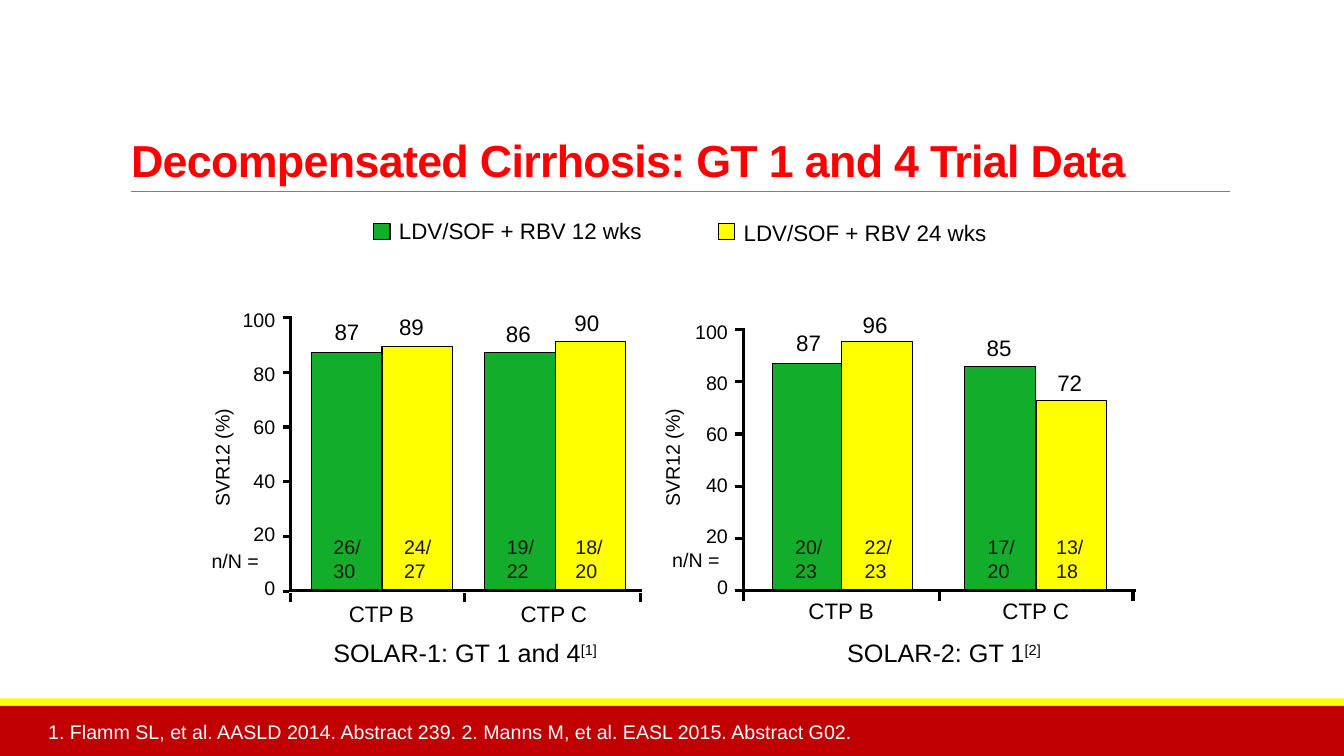
import pptx
import pptx.util
import pptx.dml.color
import pptx.enum.shapes
import pptx.enum.text
import pptx.oxml.ns
import lxml.etree

COLOURS = {"red": "FF0000", "band": "C00000", "yellow": "FFFF00", "green": "12AD2B",
           "black": "000000", "ratio": "1A1504", "grey": "808080", "white": "FFFFFF"}
COLOURS = {name: pptx.dml.color.RGBColor.from_string(value) for name, value in COLOURS.items()}
ALIGN = pptx.enum.text.PP_ALIGN
ANCHOR = pptx.enum.text.MSO_ANCHOR
FIT = pptx.enum.text.MSO_AUTO_SIZE

# Grid: every column and row is a tenth of an inch
CELL = pptx.util.Inches(0.1)
COLUMNS, ROWS = 133.33, 75

presentation = pptx.Presentation()
presentation.slide_width = round(COLUMNS * CELL)
presentation.slide_height = ROWS * CELL
slide = presentation.slides.add_slide(presentation.slide_layouts[5])


def add_text(text, left, top, width, height, size=16, colour="black", align=ALIGN.LEFT,
             wrap=False, anchor=ANCHOR.TOP):
    box = slide.shapes.add_textbox(*(round(n * CELL) for n in (left, top, width, height)))
    frame = {"word_wrap": wrap, "auto_size": FIT.SHAPE_TO_FIT_TEXT, "vertical_anchor": anchor}
    for name, value in frame.items():
        setattr(box.text_frame, name, value)
    paragraph = box.text_frame.paragraphs[0]
    paragraph.alignment = align
    run = paragraph.add_run()
    run.text = text
    for name, value in {"name": "Arial", "size": pptx.util.Pt(size)}.items():
        setattr(run.font, name, value)
    run.font.color.rgb = COLOURS[colour]
    return box


def add_line(x1, y1, x2, y2, colour="black", weight=2.25):
    line = slide.shapes.add_connector(pptx.enum.shapes.MSO_CONNECTOR.STRAIGHT,
                                      *(round(n * CELL) for n in (x1, y1, x2, y2)))
    line.line.color.rgb = COLOURS[colour]
    line.line.width = pptx.util.Pt(weight)
    lxml.etree.SubElement(line._element.spPr, pptx.oxml.ns.qn("a:effectLst"))


# Bars: left, top, value, value left, value top, n/N, n/N left, n/N width
panels = [
    {"name": "SOLAR-1: GT 1 and 4", "reference": "[1]", "name_box": (28.5, 35.3),
     "axis": 28.8, "axis_top": 31.4, "axis_end": 63.7,
     "tick_left": 28.1, "tick_top": 31.5, "tick_step": 5.43,
     "label_right": 28.3, "label_top": 30.1, "label_step": 5.3,
     "axis_title": (8.2, 27.7), "ratio_label": (20, 54),
     "category_ticks": (28.8, 46.1, 63.5), "category_tick_top": 58.8,
     "categories": (33.5, 50.6), "category_top": 59,
     "bars": [(30.9, 35, "87", 32.2, 31.1, "26/ 30", 32.1, 6.2),
              (37.9, 34.4, "89", 38.6, 30.6, "24/ 27", 39.1, 6.6),
              (48.1, 35, "86", 49.2, 31.3, "19/ 22", 49.3, 5.6),
              (55.1, 33.9, "90", 56, 30.2, "18/ 20", 56.1, 6.1)]},
    {"name": "SOLAR-2: GT 1", "reference": "[2]", "name_box": (73.9, 39.5),
     "axis": 73.8, "axis_top": 32.5, "axis_end": 112.7,
     "tick_left": 72.9, "tick_top": 32.7, "tick_step": 5.18,
     "label_right": 73.2, "label_top": 31.2, "label_step": 5.06,
     "axis_title": (60.8, 11.8), "ratio_label": (65.7, 53.9),
     "category_ticks": (73.8, 93.2, 112.4), "category_tick_top": 58.7,
     "categories": (79.1, 98.4), "category_top": 58.8,
     "bars": [(76.6, 36.1, "87", 78, 32.2, "20/23", 77.9, 5.3),
              (83.5, 33.9, "96", 84.6, 30.4, "22/23", 84.8, 5.4),
              (95.7, 36.4, "85", 96.9, 32.7, "17/20", 97, 5),
              (102.8, 39.7, "72", 103.9, 36.1, "13/18", 103.8, 5.4)]},
]
BASE = 58.6
BAR_WIDTH = 7
SERIES = ("green", "yellow")

# Rectangles: footer bands, legend keys, bars
rectangles = [(0, 70, COLUMNS, 5, "band", False), (0, 69.3, COLUMNS, 0.7, "yellow", False),
              (37.1, 22.2, 1.6, 1.6, "green", True), (71.3, 22.2, 1.6, 1.6, "yellow", True)]
for panel in panels:
    for index, (left, top, *labels) in enumerate(panel["bars"]):
        rectangles.append((left, top, BAR_WIDTH, BASE - top, SERIES[index % 2], True))
for *place, colour, outlined in rectangles:
    shape = slide.shapes.add_shape(pptx.enum.shapes.MSO_SHAPE.RECTANGLE,
                                   *(round(n * CELL) for n in place))
    shape.shadow.inherit = False
    shape.fill.solid()
    shape.fill.fore_color.rgb = COLOURS[colour]
    if outlined:
        shape.line.color.rgb = COLOURS["black"]
        shape.line.width = pptx.util.Pt(0.75)
    else:
        shape.line.fill.background()

# Title and its rule
title = slide.shapes.title
for name, value in {"left": 12, "top": 3.1, "width": 110, "height": 15.9}.items():
    setattr(title, name, round(value * CELL))
title.text_frame.text = "Decompensated Cirrhosis: GT 1 and 4 Trial Data"
title.text_frame.vertical_anchor = ANCHOR.BOTTOM
title.text_frame.auto_size = FIT.NONE
heading = title.text_frame.paragraphs[0]
heading.alignment = ALIGN.LEFT
heading.line_spacing = 0.85
run = heading.runs[0]
for name, value in {"name": "Arial", "size": pptx.util.Pt(32), "bold": True}.items():
    setattr(run.font, name, value)
run.font.color.rgb = COLOURS["red"]
run._r.get_or_add_rPr().set("spc", "-50")
add_line(13, 19, 122, 19, "grey", 0.5)

# References and legend labels
add_text("1. Flamm SL, et al. AASLD 2014. Abstract 239. 2. Manns M, et al. EASL 2015. Abstract G02.",
         3.8, 70.8, 82.1, 3.4, 14, "white", wrap=True, anchor=ANCHOR.BOTTOM)
for weeks, left, top in ((12, 38.6, 21.1), (24, 72.8, 21.2)):
    add_text(f"LDV/SOF + RBV {weeks} wks", left, top, 26.4, 3.7)

for panel in panels:
    # Axes and ticks
    axis = panel["axis"]
    add_line(axis, panel["axis_top"], axis, BASE)
    add_line(axis - 0.1, BASE, panel["axis_end"], BASE)
    for x in panel["category_ticks"]:
        add_line(x, panel["category_tick_top"], x, panel["category_tick_top"] + 0.9)
    for index, value in enumerate(range(100, -1, -20)):
        y = panel["tick_top"] + index * panel["tick_step"]
        add_line(panel["tick_left"], y, axis - 0.1, y)
        width = 2 + 1.1 * len(str(value))
        add_text(str(value), panel["label_right"] - width,
                 panel["label_top"] + index * panel["label_step"], width, 3.4, 14,
                 align=ALIGN.RIGHT)

    # Axis title, row label and categories
    left, width = panel["axis_title"]
    axis_title = add_text("SVR12 (%)", left, 43.7, width, 3.4, 14, align=ALIGN.CENTER, wrap=True)
    axis_title.rotation = 270
    add_text("n/N =", *panel["ratio_label"], 6.8, 3.4, 14)
    for category, left in zip(("CTP B", "CTP C"), panel["categories"]):
        add_text(category, left, panel["category_top"], 8.7, 3.7, align=ALIGN.CENTER)

    # Bar labels
    for _, _, value, value_left, value_top, ratio, ratio_left, ratio_width in panel["bars"]:
        add_text(value, value_left, value_top, 4.5, 3.7)
        add_text(ratio, ratio_left, 52.6, ratio_width, 5.8, 14, "ratio", wrap=True)

    # Trial name with raised reference
    left, width = panel["name_box"]
    name_box = add_text(panel["name"], left, 63.1, width, 3.7, 18, align=ALIGN.CENTER, wrap=True)
    paragraph = name_box.text_frame.paragraphs[0]
    paragraph.line_spacing = 0.9
    reference = paragraph.add_run()
    reference.text = panel["reference"]
    for name, value in {"name": "Arial", "size": pptx.util.Pt(18)}.items():
        setattr(reference.font, name, value)
    reference.font.color.rgb = COLOURS["black"]
    reference._r.get_or_add_rPr().set("baseline", "30000")

presentation.save("out.pptx")
